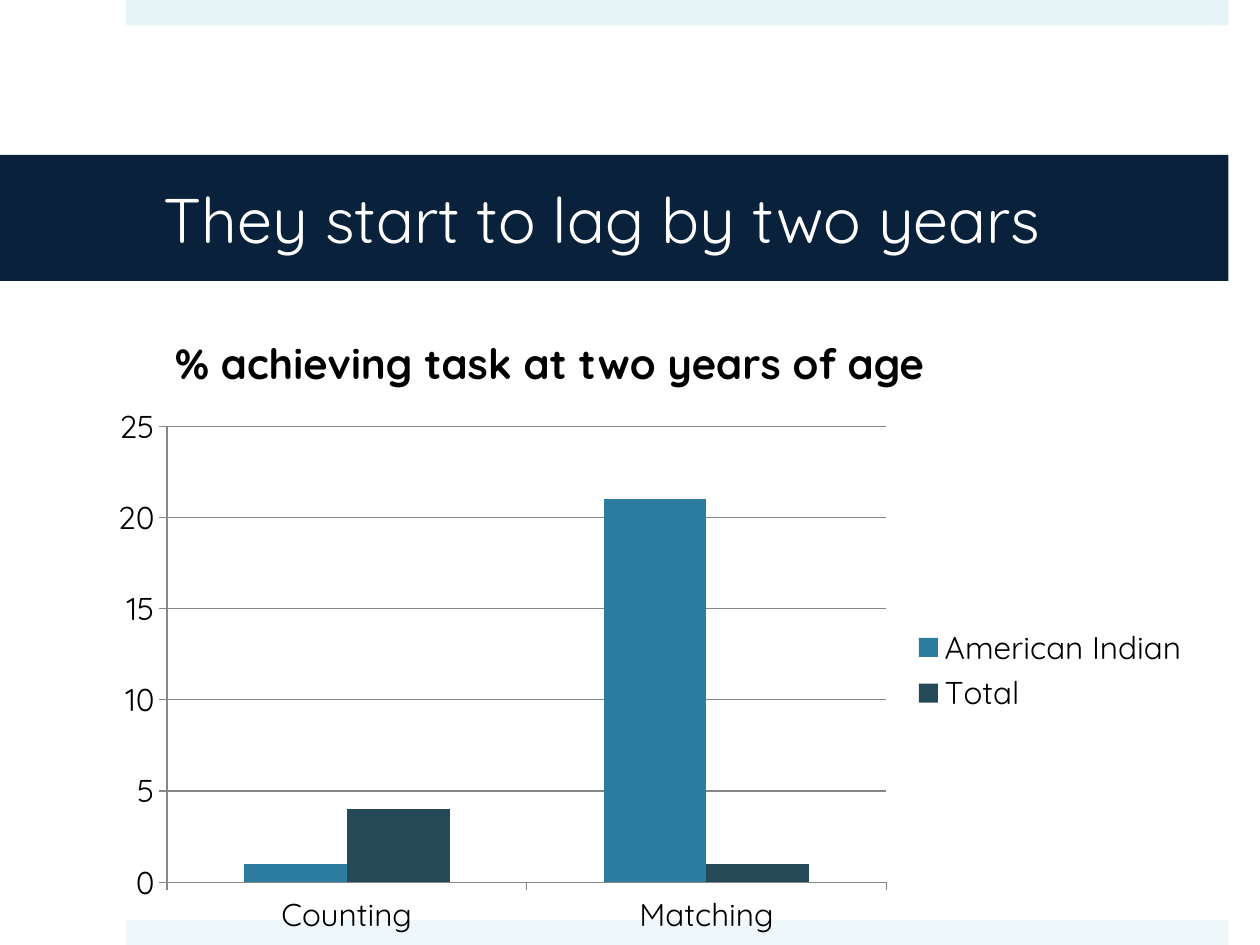
from dataclasses import dataclass

from pptx import Presentation
from pptx.chart.data import CategoryChartData
from pptx.dml.color import RGBColor
from pptx.enum.chart import XL_CHART_TYPE, XL_LEGEND_POSITION, XL_TICK_MARK
from pptx.enum.shapes import MSO_SHAPE
from pptx.enum.text import MSO_ANCHOR, MSO_AUTO_SIZE, PP_ALIGN
from pptx.util import Inches, Pt


@dataclass(frozen=True)
class Theme:
    face: str = "Quicksand"
    navy: str = "09213B"
    white: str = "FFFFFF"
    black: str = "000000"
    grid: str = "868686"
    top: str = "E6F4F8"
    foot: str = "EEF8FB"
    bars: tuple = ("2C7C9F", "244A58")
    title: int = 36
    head: int = 24
    label: int = 18


theme = Theme()


def paint(fill, color):
    fill.solid()
    fill.fore_color.rgb = RGBColor.from_string(color)


def style(font, size, color, bold=False):
    font.name = theme.face
    font.size = Pt(size)
    font.bold = bold
    font.color.rgb = RGBColor.from_string(color)


deck = Presentation()
deck.slide_width, deck.slide_height = Inches(10), Inches(7.5)
slide = deck.slides.add_slide(deck.slide_layouts[5])
shapes = slide.shapes
title = shapes.title

# Pale strips at the top and foot, behind everything else
for y, color in ((0, theme.top), (7.3, theme.foot)):
    strip = shapes.add_shape(
        MSO_SHAPE.RECTANGLE, Inches(1), Inches(y), Inches(8.75), Inches(0.2))
    strip.shadow.inherit = False
    paint(strip.fill, color)
    strip.line.fill.background()
    title._element.addprevious(strip._element)

# Title band
title.left, title.top = Inches(0), Inches(1.23)
title.width, title.height = Inches(9.75), Inches(1)
paint(title.fill, theme.navy)
frame = title.text_frame
frame.text = "They start to lag by two years"
frame.auto_size = MSO_AUTO_SIZE.NONE
frame.vertical_anchor = MSO_ANCHOR.MIDDLE
frame.margin_left, frame.margin_right = Inches(1.3), Inches(0.3)
frame.paragraphs[0].alignment = PP_ALIGN.LEFT
style(frame.paragraphs[0].font, theme.title, theme.white)

# Chart
data = CategoryChartData()
data.categories = ["Counting", "Matching"]
data.add_series("American Indian", (1, 21))
data.add_series("Total", (4, 1))
chart = shapes.add_chart(
    XL_CHART_TYPE.COLUMN_CLUSTERED,
    Inches(0.76), Inches(3.14), Inches(8.78), Inches(4.36), data).chart
chart.has_title = False
style(chart.font, theme.label, theme.black)
chart.has_legend = True
chart.legend.position = XL_LEGEND_POSITION.RIGHT
chart.legend.include_in_layout = False

plot = chart.plots[0]
plot.vary_by_categories = False
plot.gap_width, plot.overlap = 150, 0
for series, color in zip(plot.series, theme.bars):
    paint(series.format.fill, color)

scale = chart.value_axis
scale.minimum_scale, scale.maximum_scale, scale.major_unit = 0, 25, 5
scale.has_major_gridlines = True
for axis in (chart.category_axis, scale):
    axis.major_tick_mark = XL_TICK_MARK.OUTSIDE
    axis.minor_tick_mark = XL_TICK_MARK.NONE
for part in (chart.category_axis, scale, scale.major_gridlines):
    part.format.line.width = Pt(0.75)
    paint(part.format.line.fill, theme.grid)

# Chart heading
head = shapes.add_textbox(
    Inches(1.29), Inches(2.63), Inches(6.73), Inches(0.5)).text_frame
head.word_wrap = True
head.auto_size = MSO_AUTO_SIZE.SHAPE_TO_FIT_TEXT
head.text = "% achieving task at two years of age"
style(head.paragraphs[0].font, theme.head, theme.black, bold=True)

deck.save("out.pptx")
